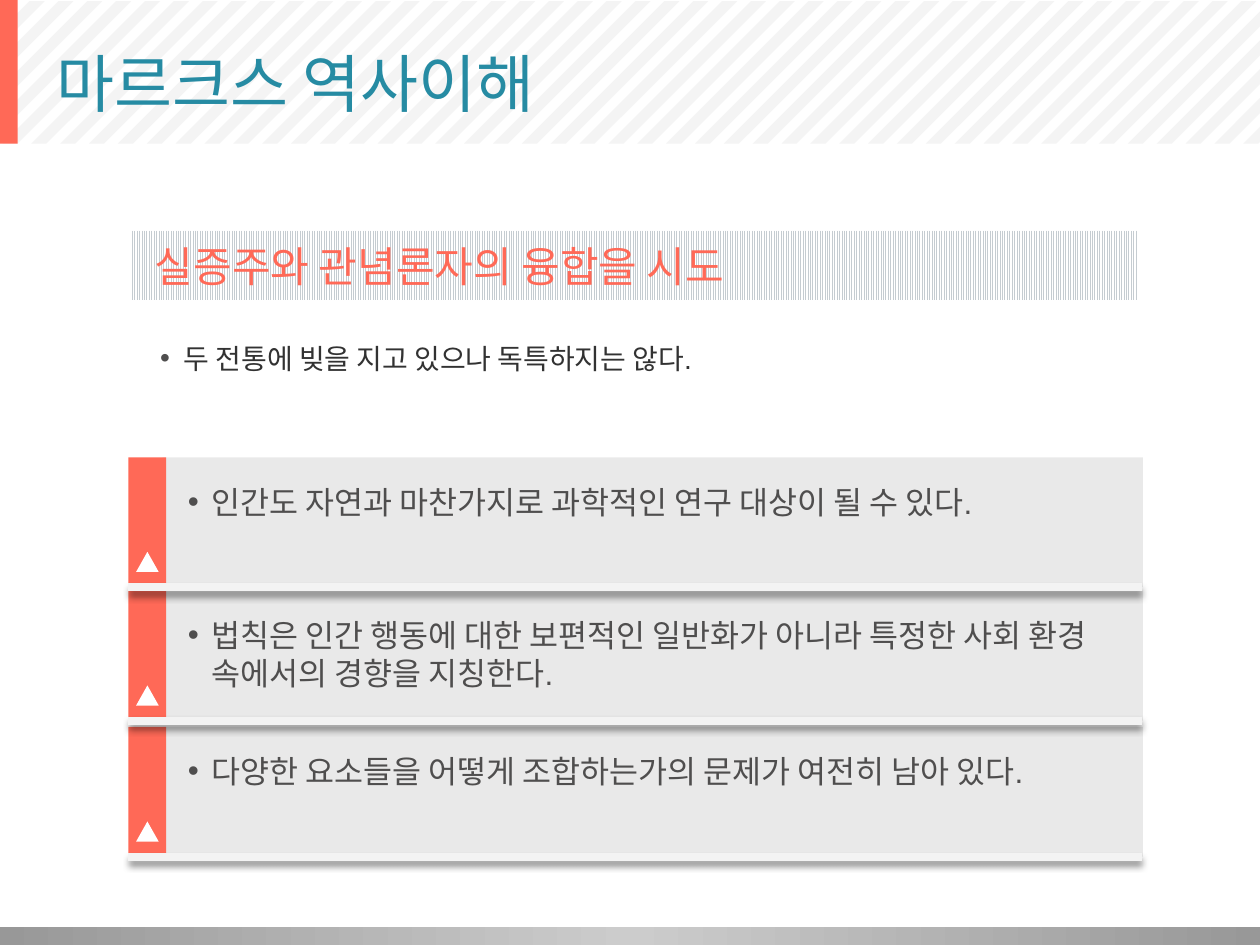
from copy import deepcopy

from pptx import Presentation
from pptx.dml.color import RGBColor
from pptx.enum.dml import MSO_PATTERN
from pptx.enum.shapes import MSO_CONNECTOR, MSO_SHAPE
from pptx.enum.text import MSO_ANCHOR, MSO_AUTO_SIZE, PP_ALIGN
from pptx.oxml import parse_xml
from pptx.oxml.ns import nsdecls, qn
from pptx.oxml.xmlchemy import OxmlElement
from pptx.util import Inches, Pt

TITLE = "마르크스 역사이해"
HEAD = "실증주와 관념론자의 융합을 시도"
LEAD = "두 전통에 빚을 지고 있으나 독특하지는 않다."
CARDS = [
    (3.63, "인간도 자연과 마찬가지로 과학적인 연구 대상이 될 수 있다."),
    (4.69, "법칙은 인간 행동에 대한 보편적인 일반화가 아니라 특정한 사회 환경 속에서의 경향을 지칭한다."),
    (5.77, "다양한 요소들을 어떻게 조합하는가의 문제가 여전히 남아 있다."),
]
THEME = {
    "font": "Arial",
    "title": (36, "268BA3"), "head": (24, "FF6957"),
    "lead": (16, "323232"), "card": (18, "4F4E4E"),
    "accent": "FF6957", "panel": "9D9C9C", "stripe": "EBEBEB",
    "rule": "F3F3F3", "white": "FFFFFF", "hatch": "C5CCD1",
    "foot": ["989898", "CCCCCC", "989898"],
}
WIDE, HIGH = 10, 7.5
TOP, BASE = 0.01, 1.14            # title band
STEP, THICK, COUNT = 0.229, 0.12, 49
LEFT, RIGHT, TALL, TAB = 1.02, 9.06, 1.03, 0.3
INSET = {"margin_left": 0.2, "margin_right": 0.1, "margin_bottom": 0.05}


def rgb(code):
    return RGBColor.from_string(code)


def box(shapes, kind, area, color=None, alpha=None):
    item = shapes.add_shape(kind, *map(Inches, area))
    item.shadow.inherit = False
    item.line.fill.background()
    if color:
        paint(item, color, alpha)
    return item


def paint(item, color, alpha=None):
    item.fill.solid()
    item.fill.fore_color.rgb = rgb(color)
    if alpha:
        node = OxmlElement("a:alpha")
        node.set("val", str(alpha * 1000))
        item._element.spPr.find(qn("a:solidFill"))[0].append(node)


def write(item, text, role, bullet=False, lines=None, **frame):
    """Fill a shape with one styled paragraph; frame holds text frame settings."""
    body = item.text_frame
    for name, value in {"word_wrap": True, "auto_size": MSO_AUTO_SIZE.NONE, **frame}.items():
        setattr(body, name, Inches(value) if name.startswith("margin") else value)
    size, color = THEME[role]
    para = body.paragraphs[0]
    run = para.add_run()
    run.text = text
    for name, value in {"size": Pt(size), "name": THEME["font"], "bold": False}.items():
        setattr(run.font, name, value)
    run.font.color.rgb = rgb(color)
    form = {"alignment": PP_ALIGN.LEFT, "space_before": Pt(size * 0.2 if bullet else 0)}
    if lines:
        form["line_spacing"] = lines
    for name, value in form.items():
        setattr(para, name, value)
    if bullet:
        props = para._p.get_or_add_pPr()
        props.set("marL", str(Inches(0.19)))
        props.set("indent", str(-Inches(0.19)))
        for xml in (f'<a:buClr {nsdecls("a")}><a:srgbClr val="{THEME["card"][1]}"/></a:buClr>',
                    f'<a:buFont {nsdecls("a")} typeface="Arial"/>',
                    f'<a:buChar {nsdecls("a")} char="•"/>'):
            props.append(parse_xml(xml))


def stripes(shapes):
    """Draw diagonal stripes cut off at the edges of the title band."""
    def ends(total):
        low, far = min(BASE, total), min(WIDE, total - TOP)
        return (total - low, low), (far, total - far)

    for index in range(COUNT):
        start = 0.015 + index * STEP
        low, high = ends(start)
        low2, high2 = ends(start + THICK)
        pen = shapes.build_freeform(*map(Inches, low))
        pen.add_line_segments([tuple(map(Inches, spot)) for spot in (high, high2, low2)])
        band = pen.convert_to_shape()
        band.shadow.inherit = False
        band.line.fill.background()
        paint(band, THEME["stripe"], 52)


def footer(shapes):
    bar = box(shapes, MSO_SHAPE.RECTANGLE, (0, 7.36, WIDE, 0.14))
    bar.fill.gradient()
    bar.fill.gradient_angle = 0
    stops = bar._element.spPr.find(qn("a:gradFill")).find(qn("a:gsLst"))
    stops.append(deepcopy(stops[0]))
    for index, (stop, color) in enumerate(zip(bar.fill.gradient_stops, THEME["foot"])):
        stop.position = index / 2
        stop.color.rgb = rgb(color)


def card(shapes, top, text):
    panel = box(shapes, MSO_SHAPE.RECTANGLE, (1.29, top, 7.78, TALL), THEME["panel"], 22)
    write(panel, text, "card", True, vertical_anchor=MSO_ANCHOR.TOP, margin_top=0.2, **INSET)
    box(shapes, MSO_SHAPE.RECTANGLE, (LEFT, top, TAB, TALL), THEME["accent"])
    box(shapes, MSO_SHAPE.ISOSCELES_TRIANGLE, (LEFT + 0.06, top + 0.75, 0.18, 0.16), THEME["white"])
    foot = top + TALL
    rule = shapes.add_connector(MSO_CONNECTOR.STRAIGHT, *map(Inches, (LEFT, foot, RIGHT, foot)))
    rule.line.width = Pt(4.5)
    rule.line.color.rgb = rgb(THEME["rule"])
    rule._element.spPr.append(parse_xml(
        f'<a:effectLst {nsdecls("a")}><a:outerShdw blurRad="{Pt(4)}" dist="{Pt(3)}" '
        'dir="5400000" rotWithShape="0"><a:srgbClr val="000000"><a:alpha val="40000"/>'
        '</a:srgbClr></a:outerShdw></a:effectLst>'))


def place(item, area):
    """Position a placeholder and bring it to the front."""
    for name, value in zip(("left", "top", "width", "height"), area):
        setattr(item, name, Inches(value))
    item._element.getparent().append(item._element)


def main():
    deck = Presentation()
    deck.slide_width, deck.slide_height = Inches(WIDE), Inches(HIGH)
    slide = deck.slides.add_slide(deck.slide_layouts[1])
    shapes = slide.shapes
    title, lead = slide.placeholders

    stripes(shapes)
    footer(shapes)
    box(shapes, MSO_SHAPE.RECTANGLE, (0, 0, 0.14, BASE), THEME["accent"])
    for top, text in reversed(CARDS):
        card(shapes, top, text)

    place(title, (0.35, 0.14, 9.27, 1.03))
    write(title, TITLE, "title", vertical_anchor=MSO_ANCHOR.MIDDLE)
    place(lead, (1.17, 2.5, 7.73, 0.94))
    write(lead, LEAD, "lead", True, 1.6)

    head = box(shapes, MSO_SHAPE.RECTANGLE, (1.03, 1.83, 8, 0.55))
    head.fill.patterned()
    head.fill.pattern = MSO_PATTERN.LIGHT_VERTICAL
    head.fill.fore_color.rgb = rgb(THEME["hatch"])
    head.fill.back_color.rgb = rgb(THEME["white"])
    write(head, HEAD, "head", word_wrap=False, vertical_anchor=MSO_ANCHOR.MIDDLE,
          margin_top=0.05, **INSET)
    deck.save("out.pptx")


if __name__ == "__main__":
    main()
